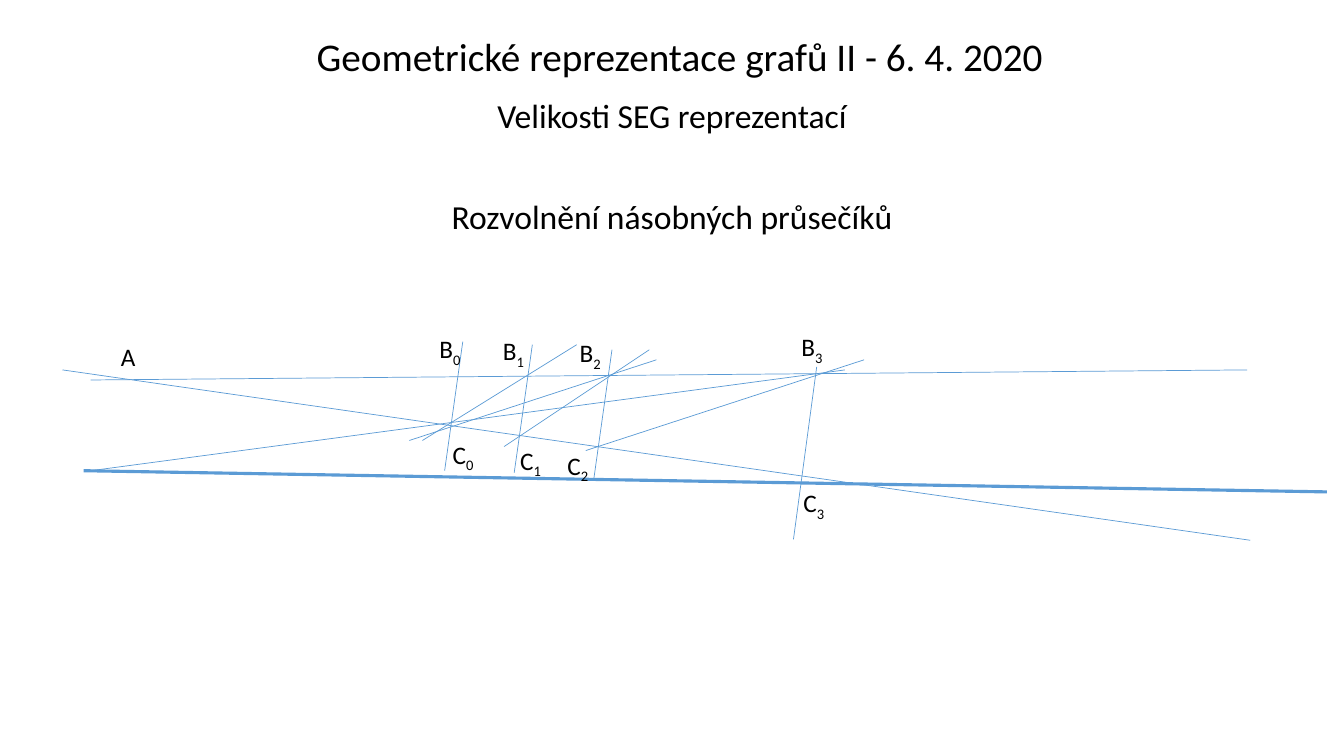
from dataclasses import dataclass

from lxml.etree import SubElement
from pptx import Presentation
from pptx.dml.color import RGBColor as RGB
from pptx.enum.shapes import MSO_CONNECTOR as CONN
from pptx.enum.text import MSO_ANCHOR as ANCHOR, MSO_AUTO_SIZE as AUTO, PP_ALIGN as ALIGN
from pptx.oxml.ns import qn
from pptx.util import Emu, Pt

PX = 9144


@dataclass(frozen=True)
class Theme:
    font: str = "Calibri"
    text: RGB = RGB(0x00, 0x00, 0x00)
    line: RGB = RGB(0x5B, 0x9B, 0xD5)
    title: int = 28
    body: int = 24
    label: int = 18
    thin: float = 0.5
    thick: float = 2.25


THEME = Theme()

SEGMENTS = [
    (90, 377, 1237, 367),
    (62, 367, 1240, 536),
    (459, 339, 441, 467),
    (419, 437, 572, 342),
    (528, 342, 510, 469),
    (500, 443, 644, 347),
    (607, 347, 589, 475),
    (406, 437, 651, 357),
    (581, 447, 857, 357),
    (810, 364, 787, 535),
    (90, 467, 838, 367),
]
BASE_LINE = (83, 467, 1316, 488)

POINTS = {
    "B": [(426, 326), (489, 328), (565, 330), (785, 324)],
    "C": [(439, 431), (506, 437), (553, 442), (787, 479)],
}


def px(n):
    return Emu(n * PX)


def style_run(r, size):
    r.font.name = THEME.font
    r.font.size = Pt(size)
    r.font.color.rgb = THEME.text


def add_box(s, x, y, w, h, wrap=True):
    tf = s.shapes.add_textbox(px(x), px(y), px(w), px(h)).text_frame
    tf.word_wrap = wrap
    return tf


def add_centred(s, box, lines, size, gaps, anchor=ANCHOR.TOP):
    tf = add_box(s, *box)
    tf.vertical_anchor = anchor
    tf.text = "\n".join(lines)
    for p, gap in zip(tf.paragraphs, gaps):
        p.alignment = ALIGN.CENTER
        p.line_spacing = 0.9
        p.space_before = Pt(gap)
        style_run(p.runs[0], size)


def add_segment(s, ends, width):
    line = s.shapes.add_connector(CONN.STRAIGHT, *map(px, ends))
    line.line.color.rgb = THEME.line
    line.line.width = Pt(width)
    SubElement(line._element.spPr, qn("a:effectLst"))


def add_label(s, x, y, letter, index=None):
    tf = add_box(s, x, y, 35 if index is None else 42, 40, wrap=False)
    tf.auto_size = AUTO.SHAPE_TO_FIT_TEXT
    p = tf.paragraphs[0]
    p.text = letter
    if index is not None:
        r = p.add_run()
        r.text = str(index)
        r._r.get_or_add_rPr().set("baseline", "-25000")
    for r in p.runs:
        style_run(r, THEME.label)


def main():
    prs = Presentation()
    prs.slide_width, prs.slide_height = px(1333), px(750)
    s = prs.slides.add_slide(prs.slide_layouts[6])

    add_centred(s, (174, 23, 1000, 61),
                ["Geometrické reprezentace grafů II - 6. 4. 2020"],
                THEME.title, [0], ANCHOR.BOTTOM)
    add_centred(s, (17, 94, 1299, 641),
                ["Velikosti SEG reprezentací", "Rozvolnění násobných průsečíků"],
                THEME.body, [10, 46])

    for ends in SEGMENTS:
        add_segment(s, ends, THEME.thin)
    add_segment(s, BASE_LINE, THEME.thick)

    add_label(s, 110, 334, "A")
    for letter, places in POINTS.items():
        for i, (x, y) in enumerate(places):
            add_label(s, x, y, letter, i)

    prs.save("out.pptx")


if __name__ == "__main__":
    main()
